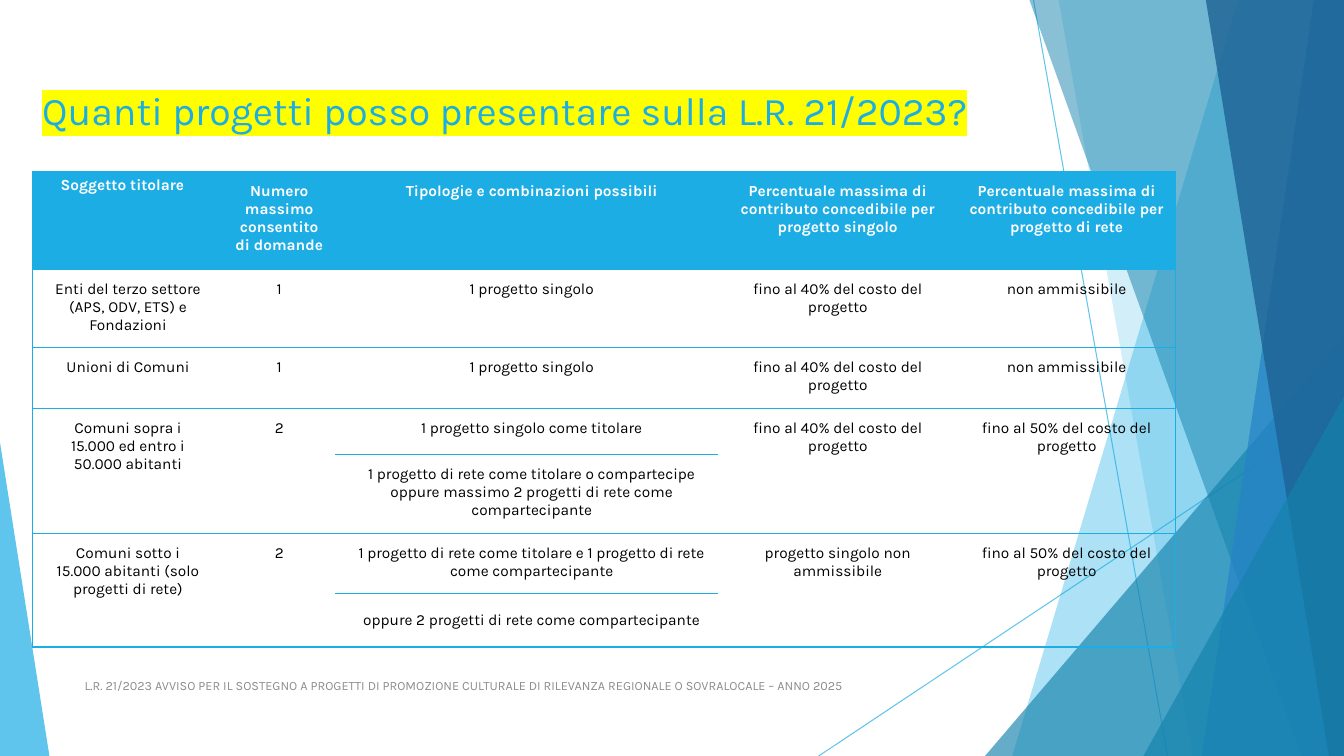
"""Build the slide on how many projects may be submitted under L.R. 21/2023."""
from dataclasses import dataclass

from lxml import etree
from pptx import Presentation
from pptx.dml.color import RGBColor
from pptx.enum.shapes import MSO_CONNECTOR as Connector, MSO_SHAPE as Preset
from pptx.enum.text import MSO_ANCHOR as Anchor, PP_ALIGN as Align
from pptx.oxml.ns import qn
from pptx.util import Inches, Pt


@dataclass(frozen=True)
class Theme:
    """Colours, font and type sizes of the slide."""
    font: str = "Karla"
    sky: str = "1CADE4"
    teal: str = "1482AC"
    blue: str = "2683C6"
    navy: str = "1D6294"
    highlight: str = "FFFF00"
    grey: str = "8C8C8C"
    white: str = "FFFFFF"
    black: str = "000000"
    title_size: float = 28
    table_size: float = 11
    footer_size: float = 9


THEME = Theme()
WIDTH, HEIGHT = 13.33, 7.5
CHOICE_COLUMN = 2
COLUMN_WIDTHS = (1.79, 1.21, 3.8, 2.27, 2.27)
ROW_HEIGHTS = (0.97, 0.78, 0.6, 0.46, 0.78, 0.6, 0.53)
SPLIT_ROWS = (3, 5)
SINGLE_SHARE = "fino al 40% del costo del progetto"
NETWORK_SHARE = "fino al 50% del costo del progetto"
ROWS = (
    ("Soggetto titolare", "Numero massimo consentito di domande",
     "Tipologie e combinazioni possibili",
     "Percentuale massima di contributo concedibile per progetto singolo",
     "Percentuale massima di contributo concedibile per progetto di rete"),
    ("Enti del terzo settore (APS, ODV, ETS) e Fondazioni", "1",
     "1 progetto singolo", SINGLE_SHARE, "non ammissibile"),
    ("Unioni di Comuni", "1", "1 progetto singolo", SINGLE_SHARE, "non ammissibile"),
    ("Comuni sopra i 15.000 ed entro i 50.000 abitanti", "2",
     "1 progetto singolo come titolare", SINGLE_SHARE, NETWORK_SHARE),
    ("", "", "1 progetto di rete come titolare o compartecipe oppure massimo "
     "2 progetti di rete come compartecipante", "", ""),
    ("Comuni sotto i 15.000 abitanti (solo progetti di rete)", "2",
     "1 progetto di rete come titolare e 1 progetto di rete come compartecipante",
     "progetto singolo non ammissibile", NETWORK_SHARE),
    ("", "", "oppure 2 progetti di rete come compartecipante", "", ""),
)


def set_opacity(element, percent):
    """Set the opacity of the first colour found inside an element."""
    color = next(element.iter(qn("a:srgbClr")))
    etree.SubElement(color, qn("a:alpha"), val=str(percent * 1000))


def write_text(frame, text, *, size, color, bold=False, align=Align.LEFT,
               before=0, after=0, spacing=None, highlight=None):
    """Write one formatted paragraph into a text frame."""
    frame.word_wrap = True
    paragraph = frame.paragraphs[0]
    paragraph.alignment = align
    paragraph.space_before = Pt(before)
    paragraph.space_after = Pt(after)
    paragraph.line_spacing = spacing
    run = paragraph.add_run()
    run.text = text
    font = run.font
    font.name, font.size, font.bold = THEME.font, Pt(size), bold
    font.color.rgb = RGBColor.from_string(color)
    if highlight:
        mark = etree.Element(qn("a:highlight"))
        etree.SubElement(mark, qn("a:srgbClr"), val=highlight)
        run._r.rPr.find(qn("a:solidFill")).addnext(mark)


def add_text(slide, text, left, top, width, height, *, anchor=Anchor.TOP, **text_format):
    """Add a text box holding one paragraph."""
    box = slide.shapes.add_textbox(Inches(left), Inches(top), Inches(width), Inches(height))
    box.text_frame.vertical_anchor = anchor
    write_text(box.text_frame, text, **text_format)


def add_ray(slide, start, end):
    """Add a thin translucent line."""
    ray = slide.shapes.add_connector(
        Connector.STRAIGHT, *(Inches(value) for value in (*start, *end)))
    ray.line.color.rgb = RGBColor.from_string(THEME.sky)
    ray.line.width = Pt(0.75)
    properties = ray._element.spPr
    set_opacity(properties, 70)
    etree.SubElement(properties, qn("a:effectLst"))


def paint(shape, color, opacity):
    """Give a shape a translucent fill without outline or shadow."""
    shape.shadow.inherit = False
    shape.line.fill.background()
    shape.fill.solid()
    shape.fill.fore_color.rgb = RGBColor.from_string(color)
    set_opacity(shape._element.spPr, opacity)


def add_band(slide, top_x, bottom_x, color, opacity):
    """Add a full-height band from a slanted edge to the right side."""
    builder = slide.shapes.build_freeform(Inches(top_x), 0)
    corners = ((WIDTH, 0), (WIDTH, HEIGHT), (bottom_x, HEIGHT))
    builder.add_line_segments([(Inches(x), Inches(y)) for x, y in corners], close=True)
    paint(builder.convert_to_shape(), color, opacity)


def add_corner(slide, left, top, width, apex, color, opacity):
    """Add a triangle standing on the bottom edge with its apex at one side."""
    triangle = slide.shapes.add_shape(
        Preset.ISOSCELES_TRIANGLE, Inches(left), Inches(top),
        Inches(width), Inches(HEIGHT - top))
    triangle.adjustments[0] = apex
    paint(triangle, color, opacity)


def add_facets(slide):
    """Add the translucent facets on both sides of the slide."""
    add_ray(slide, (10.25, 0), (11.58, HEIGHT))
    add_ray(slide, (WIDTH, 4.03), (8.12, HEIGHT))
    add_band(slide, 12.28, 10.04, THEME.sky, 36)
    add_band(slide, 10.5, 11.83, THEME.sky, 20)
    add_corner(slide, 9.77, 3.33, 3.56, 1, THEME.teal, 66)
    add_band(slide, 10.21, 12.91, THEME.teal, 50)
    add_band(slide, 13.03, 11.92, THEME.blue, 70)
    add_band(slide, 11.96, 13.18, THEME.navy, 80)
    add_corner(slide, 11.34, 3.93, 1.99, 1, THEME.teal, 66)
    add_corner(slide, 0, 4.39, 0.49, 0, THEME.sky, 70)


def set_borders(cell, sides):
    """Draw the named sides of a cell and clear the others."""
    properties = cell._tc.get_or_add_tcPr()
    for side in "LRTB":
        border = etree.SubElement(properties, qn(f"a:ln{side}"), w=str(Pt(1)))
        if side in sides:
            fill = etree.SubElement(border, qn("a:solidFill"))
            etree.SubElement(fill, qn("a:srgbClr"), val=THEME.sky)
        else:
            etree.SubElement(border, qn("a:noFill"))


def format_cell(cell, text, row, column):
    """Set borders, fill, margins and text of one table cell."""
    sides = "B" if cell.is_spanned else "TB"
    sides += {0: "L", len(COLUMN_WIDTHS) - 1: "R"}.get(column, "")
    set_borders(cell, sides)
    if row == 0:
        cell.fill.solid()
        cell.fill.fore_color.rgb = RGBColor.from_string(THEME.sky)
    else:
        cell.fill.background()
    if row or column:
        cell.margin_left = Inches(0.22)
        cell.margin_right = cell.margin_top = cell.margin_bottom = Inches(0.11)
    if text:
        write_text(cell.text_frame, text, size=THEME.table_size, bold=row == 0,
                   color=THEME.black if row else THEME.white, align=Align.CENTER, after=8)


def add_project_table(slide):
    """Add the table of applicants, project types and funding shares."""
    table = slide.shapes.add_table(
        len(ROWS), len(COLUMN_WIDTHS), Inches(0.32), Inches(1.7),
        Inches(sum(COLUMN_WIDTHS)), Inches(sum(ROW_HEIGHTS))).table
    table.horz_banding = False
    for column, width in zip(table.columns, COLUMN_WIDTHS):
        column.width = Inches(width)
    for row, height in zip(table.rows, ROW_HEIGHTS):
        row.height = Inches(height)
    for row in SPLIT_ROWS:
        for column in range(len(COLUMN_WIDTHS)):
            if column != CHOICE_COLUMN:
                table.cell(row, column).merge(table.cell(row + 1, column))
    for row, texts in enumerate(ROWS):
        for column, text in enumerate(texts):
            format_cell(table.cell(row, column), text, row, column)
    table.cell(len(ROWS) - 1, CHOICE_COLUMN).vertical_anchor = Anchor.MIDDLE


def main():
    """Build and save the presentation."""
    presentation = Presentation()
    presentation.slide_width, presentation.slide_height = Inches(WIDTH), Inches(HEIGHT)
    slide = presentation.slides.add_slide(presentation.slide_layouts[6])
    add_facets(slide)
    add_text(slide, "Quanti progetti posso presentare sulla L.R. 21/2023?",
             0.32, 0.81, 9.39, 0.72, size=THEME.title_size, color=THEME.sky,
             before=10, highlight=THEME.highlight)
    add_text(slide, "L.R. 21/2023 AVVISO PER IL SOSTEGNO A PROGETTI DI PROMOZIONE CULTURALE "
             "DI RILEVANZA REGIONALE O SOVRALOCALE – ANNO 2025",
             0.74, 6.61, 7.98, 0.4, anchor=Anchor.MIDDLE, size=THEME.footer_size,
             color=THEME.grey, after=6, spacing=0.9)
    add_project_table(slide)
    presentation.save("out.pptx")


if __name__ == "__main__":
    main()
